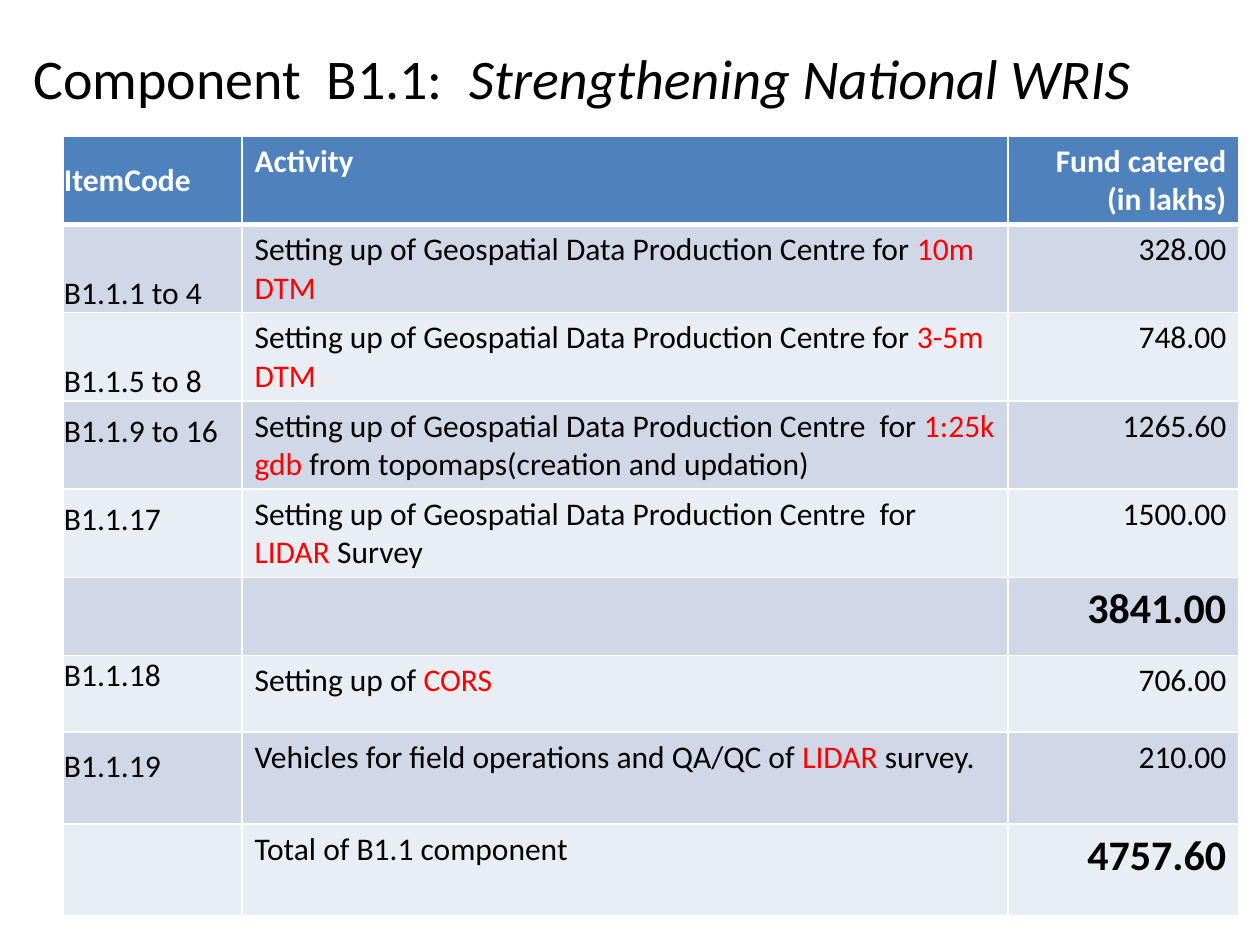
from lxml.etree import SubElement
from pptx import Presentation
from pptx.dml.color import RGBColor
from pptx.enum.text import MSO_ANCHOR, PP_ALIGN
from pptx.oxml.ns import qn
from pptx.util import Pt

PX = 914400 // 126
BLACK, WHITE, RED = "000000", "FFFFFF", "FF0000"
HEAD, BANDS = "4F81BD", ("D0D8E8", "E9EDF4")
COLS = (179, 766, 231)
ROWS = (86, 86, 86, 86, 86, 78, 74, 92, 92)
LINE = 38  # one line of 18 pt text

CENTRE = "Setting up of Geospatial Data Production Centre for "
WIDE = "Setting up of Geospatial Data Production Centre  for "
# code, space below the code, activity (every second run is red), fund, sum?
ITEMS = [
    ("B1.1.1 to 4", 0, [CENTRE, "10m DTM"], "328.00", False),
    ("B1.1.5 to 8", 0, [CENTRE, "3-5m DTM"], "748.00", False),
    ("B1.1.9 to 16", LINE,
     [WIDE, "1:25k gdb ", "from topomaps(creation and updation)"],
     "1265.60", False),
    ("B1.1.17", LINE, [WIDE, "LIDAR ", "Survey"], "1500.00", False),
    ("", 0, [], "3841.00", True),
    ("B1.1.18", LINE, ["Setting up of ", "CORS"], "706.00", False),
    ("B1.1.19", LINE,
     ["Vehicles for field operations and QA/QC of ", "LIDAR ", "survey."],
     "210.00", False),
    ("", 0, ["Total of B1.1 component"], "4757.60", True),
]


def px(n):
    return n * PX


def tint(hue):
    return RGBColor.from_string(hue)


def add_run(para, text, size=18, hue=BLACK, bold=False, italic=False):
    run = para.add_run()
    run.text = text
    font = run.font
    font.name, font.size = "Calibri", Pt(size)
    font.bold, font.italic = bold, italic
    font.color.rgb = tint(hue)


def paint(cell, hue, head):
    """Fill a cell and give it white borders, thick below the head row."""
    props = cell._tc.get_or_add_tcPr()
    for side in ("L", "R", "T", "B"):
        wide = 3 if head and side == "B" else 1
        line = SubElement(props, qn(f"a:ln{side}"), w=str(Pt(wide)))
        fill = SubElement(line, qn("a:solidFill"))
        SubElement(fill, qn("a:srgbClr"), val=WHITE)
    cell.fill.solid()
    cell.fill.fore_color.rgb = tint(hue)


def set_code(cell, text, anchor, below=0, **style):
    if not text:
        return
    cell.margin_left = cell.margin_right = cell.margin_top = px(1)
    cell.margin_bottom = px(below)
    cell.vertical_anchor = anchor
    add_run(cell.text_frame.paragraphs[0], text, **style)


def set_fund(cell, lines, **style):
    frame = cell.text_frame
    for i, text in enumerate(lines):
        para = frame.add_paragraph() if i else frame.paragraphs[0]
        para.alignment = PP_ALIGN.RIGHT
        add_run(para, text, **style)


def add_title(slide, x, y, w, h):
    frame = slide.shapes.add_textbox(px(x), px(y), px(w), px(h)).text_frame
    frame.word_wrap = True
    frame.vertical_anchor = MSO_ANCHOR.MIDDLE
    para = frame.paragraphs[0]
    add_run(para, "Component  B1.1:  ", 32)
    add_run(para, "Strengthening National WRIS", 32, italic=True)


def add_funds(slide, x, y):
    table = slide.shapes.add_table(
        len(ROWS), len(COLS), px(x), px(y), px(sum(COLS)), px(sum(ROWS))).table
    for col, w in zip(table.columns, COLS):
        col.width = px(w)
    for i, (row, h) in enumerate(zip(table.rows, ROWS)):
        row.height = px(h)
        for cell in row.cells:
            paint(cell, BANDS[(i - 1) % 2] if i else HEAD, i == 0)

    top = {"hue": WHITE, "bold": True}
    set_code(table.cell(0, 0), "ItemCode", MSO_ANCHOR.MIDDLE, **top)
    add_run(table.cell(0, 1).text_frame.paragraphs[0], "Activity", **top)
    set_fund(table.cell(0, 2), ["Fund catered", "(in lakhs)"], **top)

    for i, (code, below, parts, fund, total) in enumerate(ITEMS, 1):
        set_code(table.cell(i, 0), code, MSO_ANCHOR.BOTTOM, below)
        para = table.cell(i, 1).text_frame.paragraphs[0]
        for j, text in enumerate(parts):
            add_run(para, text, hue=RED if j % 2 else BLACK)
        set_fund(table.cell(i, 2), [fund], size=24 if total else 18, bold=total)


def main():
    deck = Presentation()
    deck.slide_width, deck.slide_height = px(1260), px(945)
    slide = deck.slides.add_slide(deck.slide_layouts[6])
    add_title(slide, 21, 38, 1239, 78)
    add_funds(slide, 63, 136)
    deck.save("out.pptx")


if __name__ == "__main__":
    main()
